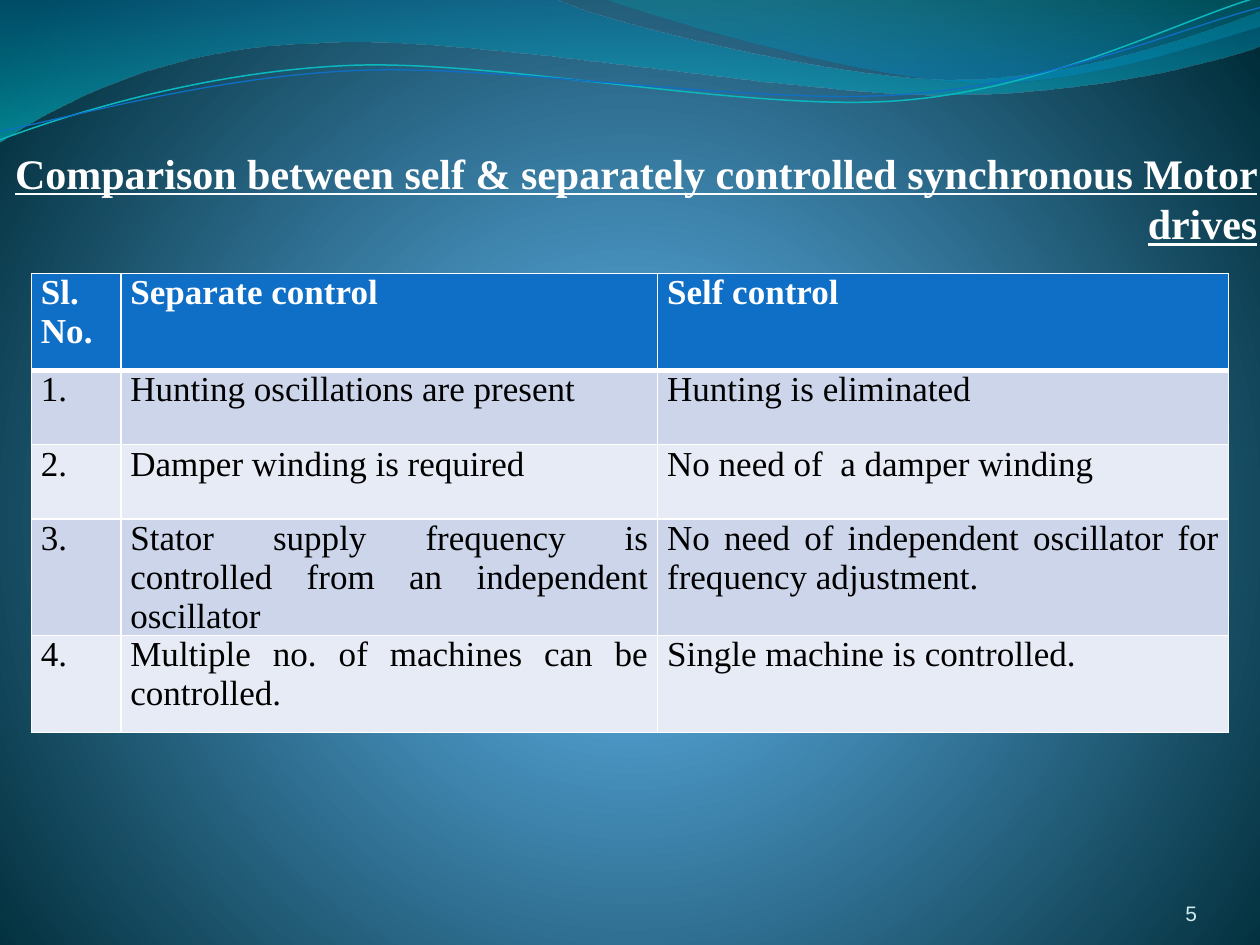
from dataclasses import dataclass

from pptx import Presentation
from pptx.dml.color import RGBColor
from pptx.enum.text import MSO_ANCHOR, MSO_AUTO_SIZE, PP_ALIGN
from pptx.oxml import parse_xml
from pptx.oxml.ns import nsdecls, qn
from pptx.util import Inches, Pt

RIGHT, JUSTIFY = PP_ALIGN.RIGHT, PP_ALIGN.JUSTIFY
BOTTOM, TOP = MSO_ANCHOR.BOTTOM, MSO_ANCHOR.TOP
TITLE_ONLY = 5


@dataclass(frozen=True)
class Theme:
    serif: str = "Times New Roman"
    sans: str = "Arial"
    title_size: int = 24
    table_size: int = 20
    number_size: int = 12
    white: str = "FFFFFF"
    black: str = "000000"
    header: str = "0F6FC6"
    bands: tuple = ("CCD5EA", "E7EBF5")
    number: str = "D1EAEE"


THEME = Theme()
WIDTH, HEIGHT = 10, 7.5

TITLE = "Comparison between self & separately controlled synchronous Motor drives"
ROWS = [
    ("Sl. No.", "Separate control", "Self control"),
    ("1.", "Hunting oscillations are present", "Hunting is eliminated"),
    ("2.", "Damper winding is required", "No need of  a damper winding"),
    ("3.", "Stator supply frequency is controlled from an independent oscillator",
     "No need of independent oscillator for frequency adjustment."),
    ("4.", "Multiple no. of machines can be controlled.", "Single machine is controlled."),
]
COLUMN_WIDTHS = (0.71, 4.26, 4.53)
ROW_HEIGHTS = (0.77, 0.59, 0.59, 0.87, 0.77)
CELL_MARGIN = Pt(5.4)
PAGE_NUMBER = "5"

# Gradient stops: position %, colour, opacity %
BACKDROP = [(0, "4AA0D6", 100), (25, "4C98C7", 100), (100, "002C38", 100)]

# Each step is one point (a straight side) or three (a Bezier curve).
BANDS = [
    ((0, 0), [
        [(4.4, -0.01)],
        [(4.76, 0.17), (6.64, 0.63), (7.58, 0.63)],
        [(8.53, 0.63), (9.58, 0.26), (10, 0.09)],
        [(10.01, 0.36)],
        [(9.83, 0.44), (8.7, 0.76), (7.46, 0.75)],
        [(6.22, 0.75), (3.82, 0.28), (2.57, 0.34)],
        [(1.29, 0.36), (0.46, 0.83), (-0.01, 1.13)],
        [(0, 0)],
    ], [(0, "0074A1", 45), (100, "00C6CF", 55)]),
    ((4.79, -0.01), [
        [(5.09, 0.11), (6.82, 0.62), (7.69, 0.65)],
        [(8.56, 0.69), (9.61, 0.32), (10, 0.21)],
        [(10, 0)],
        [(4.79, -0.01)],
    ], [(0, "00A1A9", 30), (80, "008BBF", 45)]),
]
STRANDS = [
    ((0, 1.11), [
        [(0.48, 0.93), (1.58, 0.57), (2.77, 0.52)],
        [(3.95, 0.47), (5.93, 0.89), (7.13, 0.8)],
        [(8.33, 0.71), (9.38, 0.15), (9.98, -0.02)],
    ], "0AB8BF", 0.85),
    ((0, 1.04), [
        [(0.47, 0.96), (1.64, 0.61), (2.83, 0.56)],
        [(4.03, 0.51), (5.97, 0.84), (7.17, 0.75)],
        [(8.36, 0.67), (9.41, 0.21), (10, 0.06)],
    ], "0F6FC6", 0.75),
]


def color(value):
    return RGBColor.from_string(value)


def gradient(stops, direction):
    marks = "".join(
        f'<a:gs pos="{position * 1000}"><a:srgbClr val="{value}">'
        f'<a:alpha val="{opacity * 1000}"/></a:srgbClr></a:gs>'
        for position, value, opacity in stops)
    return parse_xml(f'<a:gradFill {nsdecls("a")} rotWithShape="1">'
                     f'<a:gsLst>{marks}</a:gsLst>{direction}</a:gradFill>')


def swap_solid_fill(parent, replacement):
    parent.replace(parent.find(qn("a:solidFill")), replacement)


def add_wave(page, start, steps, close):
    """Build a freeform through all points, then join each three into a curve."""
    builder = page.shapes.build_freeform(Inches(start[0]), Inches(start[1]))
    builder.add_line_segments(
        [(Inches(x), Inches(y)) for step in steps for x, y in step], close=close)
    wave = builder.convert_to_shape()
    wave.shadow.inherit = False
    outline = wave.element.find(".//" + qn("a:path"))
    lines = iter(outline.findall(qn("a:lnTo")))
    for step in steps:
        parts = [next(lines) for _ in step]
        if len(parts) == 3:
            curve = parse_xml(f'<a:cubicBezTo {nsdecls("a")}/>')
            outline.replace(parts[0], curve)
            for part in parts[1:]:
                outline.remove(part)
            for part in parts:
                curve.append(part[0])
    return wave


def write(frame, text, font, size, value, align, bold=False, underline=False):
    frame.text = text
    frame.word_wrap = True
    para = frame.paragraphs[0]
    para.alignment = align
    style = para.runs[0].font
    style.name, style.size, style.bold, style.underline = font, Pt(size), bold, underline
    style.color.rgb = color(value)


def place_text(frame, right=0, bottom=0):
    frame.vertical_anchor = BOTTOM
    frame.auto_size = MSO_AUTO_SIZE.NONE
    frame.margin_left = frame.margin_top = 0
    frame.margin_right, frame.margin_bottom = Inches(right), Inches(bottom)


def set_borders(cell, widths):
    properties = cell._tc.get_or_add_tcPr()
    for index, (side, points) in enumerate(widths.items()):
        border = parse_xml(f'<a:{side} {nsdecls("a")} w="{Pt(points)}"><a:solidFill>'
                           f'<a:srgbClr val="{THEME.white}"/></a:solidFill></a:{side}>')
        properties.insert(index, border)


def add_comparison(page):
    frame = page.shapes.add_table(
        len(ROWS), len(COLUMN_WIDTHS), Inches(0.25), Inches(2.17),
        Inches(sum(COLUMN_WIDTHS)), Inches(sum(ROW_HEIGHTS)))
    table = frame.table
    for column, width in zip(table.columns, COLUMN_WIDTHS):
        column.width = Inches(width)
    for r, (texts, height) in enumerate(zip(ROWS, ROW_HEIGHTS)):
        table.rows[r].height = Inches(height)
        heading = r == 0
        for c, text in enumerate(texts):
            cell = table.cell(r, c)
            write(cell.text_frame, text, THEME.serif, THEME.table_size,
                  THEME.white if heading else THEME.black, JUSTIFY, bold=heading)
            cell.vertical_anchor = TOP
            cell.margin_left = cell.margin_right = CELL_MARGIN
            cell.margin_top = cell.margin_bottom = 0
            cell.fill.solid()
            cell.fill.fore_color.rgb = color(
                THEME.header if heading else THEME.bands[(r - 1) % 2])
            set_borders(cell, {"lnL": 1, "lnR": 1, "lnT": 3 if r == 1 else 1,
                               "lnB": 3 if heading else 1})


def main():
    deck = Presentation()
    deck.slide_width, deck.slide_height = Inches(WIDTH), Inches(HEIGHT)
    page = deck.slides.add_slide(deck.slide_layouts[TITLE_ONLY])

    page.background.fill.solid()
    glow = ('<a:path path="circle"><a:fillToRect l="10000" t="110000" '
            'r="10000" b="100000"/></a:path>')
    swap_solid_fill(page.element.find(".//" + qn("p:bgPr")), gradient(BACKDROP, glow))

    for start, steps, stops in BANDS:
        band = add_wave(page, start, steps, close=True)
        band.line.fill.background()
        band.fill.solid()
        swap_solid_fill(band.element.spPr, gradient(stops, '<a:lin ang="5400000" scaled="1"/>'))
    for start, steps, value, points in STRANDS:
        strand = add_wave(page, start, steps, close=False)
        strand.fill.background()
        strand.line.color.rgb = color(value)
        strand.line.width = Pt(points)

    title = page.shapes.title
    title.left, title.top, title.width, title.height = 0, 0, Inches(WIDTH), Inches(2.5)
    write(title.text_frame, TITLE, THEME.serif, THEME.title_size, THEME.white, RIGHT,
          bold=True, underline=True)
    place_text(title.text_frame, right=0.02, bottom=0.53)

    add_comparison(page)

    number = page.shapes.add_textbox(Inches(8.67), Inches(6.95), Inches(0.83), Inches(0.4))
    write(number.text_frame, PAGE_NUMBER, THEME.sans, THEME.number_size, THEME.number, RIGHT)
    place_text(number.text_frame)
    deck.save("out.pptx")


if __name__ == "__main__":
    main()
